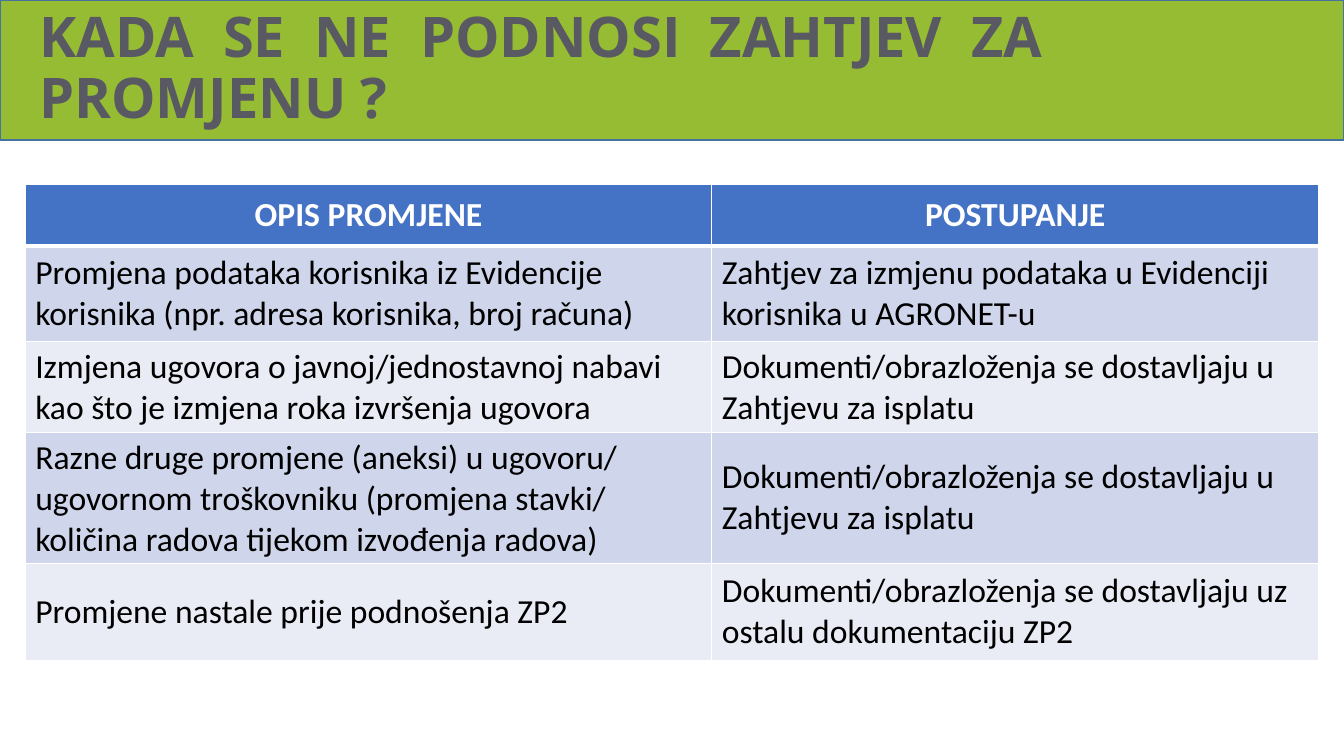
from lxml.etree import SubElement
from pptx import Presentation
from pptx.dml.color import RGBColor
from pptx.enum.shapes import MSO_SHAPE
from pptx.enum.text import MSO_ANCHOR, PP_ALIGN
from pptx.oxml.ns import qn
from pptx.util import Emu, Pt

HEAD = ["OPIS PROMJENE", "POSTUPANJE"]
ROWS = [
    ["Promjena podataka korisnika iz Evidencije korisnika (npr. adresa korisnika, broj računa)",
     "Zahtjev za izmjenu podataka u Evidenciji korisnika u AGRONET-u"],
    ["Izmjena ugovora o javnoj/jednostavnoj nabavi kao što je izmjena roka izvršenja ugovora",
     "Dokumenti/obrazloženja se dostavljaju u Zahtjevu za isplatu"],
    ["Razne druge promjene (aneksi) u ugovoru/ ugovornom troškovniku "
     "(promjena stavki/ količina radova tijekom izvođenja radova)",
     "Dokumenti/obrazloženja se dostavljaju u Zahtjevu za isplatu"],
    ["Promjene nastale prije podnošenja ZP2",
     "Dokumenti/obrazloženja se dostavljaju uz ostalu dokumentaciju ZP2"],
]


def px(num):
    """Turn px, 100 to the inch, into EMU."""
    return Emu(num * 9144)


def color(text):
    """Turn a hex string into a colour."""
    return RGBColor.from_string(text)


class Deck:
    """Holds the style and the current slide."""

    green, edge, grey = "96BC33", "43739E", "585963"
    blue, white, black = "4472C4", "FFFFFF", "000000"
    bands = ["CFD5EA", "E9EBF5"]

    def __init__(self, wide, high):
        """Start a deck with one blank slide."""
        self.prs = Presentation()
        self.prs.slide_width, self.prs.slide_height = px(wide), px(high)
        self.slide = self.prs.slides.add_slide(self.prs.slide_layouts[6])

    def run(self, para, text, font, size, tint, bold=False, gap=0):
        """Add one run, with gap in points after each letter."""
        run = para.add_run()
        run.text = text
        run.font.name, run.font.size, run.font.bold = font, Pt(size), bold
        run.font.color.rgb = color(tint)
        if gap:
            run.font._element.set("spc", str(round(gap * 100))) if hasattr(
                run.font, "_element") else run._r.get_or_add_rPr().set("spc", str(round(gap * 100)))

    def bar(self, left, top, wide, high):
        """Draw the band behind the title."""
        bar = self.slide.shapes.add_shape(
            MSO_SHAPE.RECTANGLE, px(left), px(top), px(wide), px(high))
        bar.shadow.inherit = False
        bar.fill.solid()
        bar.fill.fore_color.rgb = color(self.green)
        bar.line.color.rgb = color(self.edge)
        bar.line.width = Pt(1)

    def title(self, left, top, wide, high, words, tail):
        """Write the title with wide gaps between words."""
        box = self.slide.shapes.add_textbox(px(left), px(top), px(wide), px(high))
        frame = box.text_frame
        frame.word_wrap = True
        frame.vertical_anchor = MSO_ANCHOR.MIDDLE
        frame.margin_left = px(39)
        para = frame.paragraphs[0]
        para.line_spacing = 0.9
        style = ("Open Sans", 40, self.grey, True)
        for word in words:
            self.run(para, word, *style)
            self.run(para, " ", *style, gap=10.4)
        self.run(para, tail, *style)

    def rule(self, cell, side, width):
        """Draw one white cell border."""
        line = SubElement(cell._tc.get_or_add_tcPr(), qn("a:" + side), w=str(Pt(width)))
        fill = SubElement(line, qn("a:solidFill"))
        SubElement(fill, qn("a:srgbClr"), val=self.white)

    def cell(self, cell, text, row):
        """Fill one table cell."""
        head = row == 0
        for side in ("lnL", "lnR", "lnT", "lnB"):
            thick = (row, side) in [(0, "lnB"), (1, "lnT")]
            self.rule(cell, side, 3 if thick else 1)
        cell.fill.solid()
        cell.fill.fore_color.rgb = color(self.blue if head else self.bands[(row - 1) % 2])
        cell.vertical_anchor = MSO_ANCHOR.MIDDLE
        para = cell.text_frame.paragraphs[0]
        para.alignment = PP_ALIGN.CENTER if head else PP_ALIGN.LEFT
        self.run(para, text, "Calibri", 24, self.white if head else self.black, head)

    def table(self, left, top, high, cols, rows, data):
        """Add a table with the given column and row sizes."""
        table = self.slide.shapes.add_table(
            len(rows), len(cols), px(left), px(top), px(sum(cols)), px(high)).table
        for col, wide in zip(table.columns, cols):
            col.width = px(wide)
        for num, (row, tall, texts) in enumerate(zip(table.rows, rows, data)):
            row.height = px(tall)
            for cell, text in zip(row.cells, texts):
                self.cell(cell, text, num)


def main():
    """Build the slide and save it."""
    deck = Deck(1333, 750)
    deck.bar(0, 0, 1333, 139)
    deck.title(0, 0, 1333, 139, "KADA SE NE PODNOSI ZAHTJEV ZA".split(), "PROMJENU ?")
    deck.table(25, 183, 472, [681, 602], [61, 95, 83, 100, 96], [HEAD] + ROWS)
    deck.prs.save("out.pptx")


if __name__ == "__main__":
    main()
